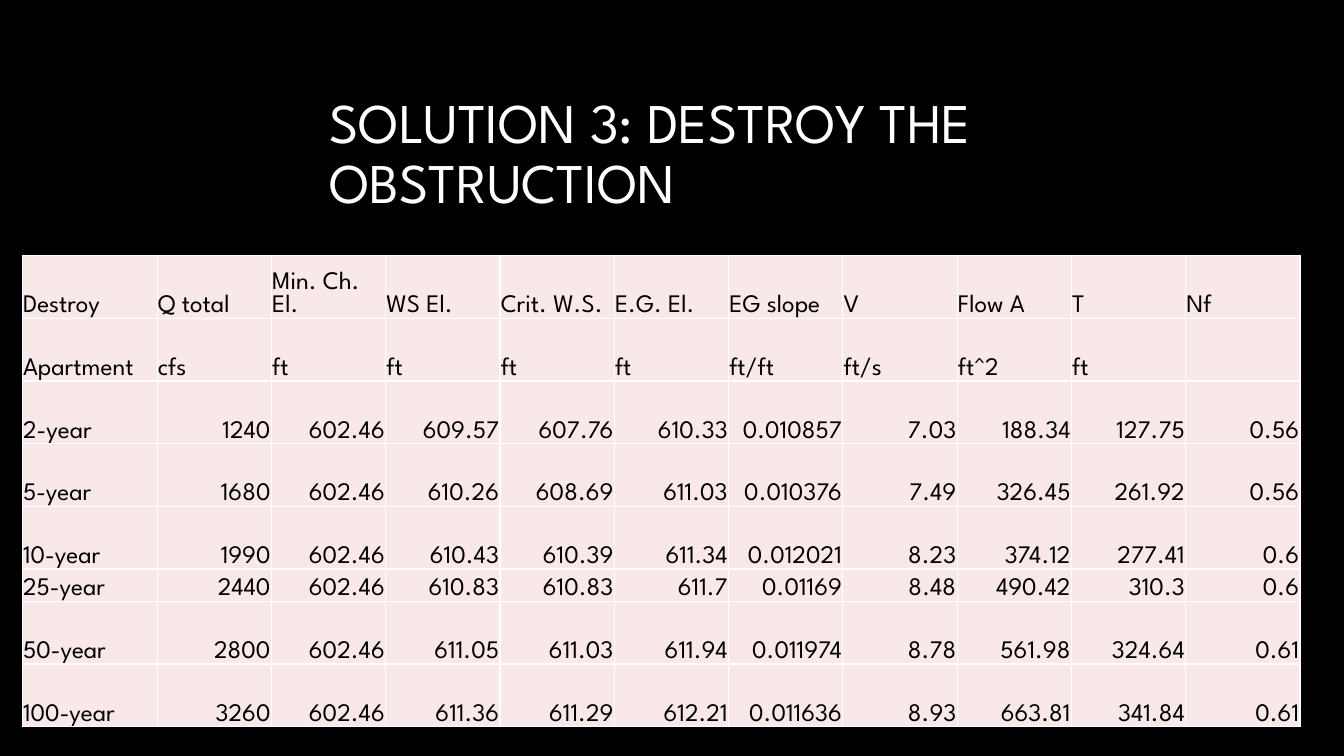
from dataclasses import dataclass

import lxml.etree
import pptx
import pptx.dml.color
import pptx.enum.text
import pptx.oxml.ns
import pptx.table
import pptx.text.text
import pptx.util
from pptx.util import Cm

FONT = "League Spartan"
BLACK, WHITE, PINK = "000000", "FFFFFF", "F9E8E8"
LEFT = pptx.enum.text.PP_ALIGN.LEFT
RIGHT = pptx.enum.text.PP_ALIGN.RIGHT
LABEL_WIDTH, VALUE_WIDTH = Cm(3.4), Cm(2.88)
TALL, SHORT = Cm(1.58), Cm(0.81)


@dataclass
class Row:
    label: str
    values: list[str]
    align: pptx.enum.text.PP_ALIGN = RIGHT
    height: int = TALL


ROWS = [
    Row("Destroy", ["Q total", "Min. Ch. El.", "WS El.", "Crit. W.S.", "E.G. El.",
                    "EG slope", "V", "Flow A", "T", "Nf"], LEFT),
    Row("Apartment", ["cfs", "ft", "ft", "ft", "ft", "ft/ft", "ft/s", "ft^2", "ft", ""], LEFT),
    Row("2-year", ["1240", "602.46", "609.57", "607.76", "610.33",
                   "0.010857", "7.03", "188.34", "127.75", "0.56"]),
    Row("5-year", ["1680", "602.46", "610.26", "608.69", "611.03",
                   "0.010376", "7.49", "326.45", "261.92", "0.56"]),
    Row("10-year", ["1990", "602.46", "610.43", "610.39", "611.34",
                    "0.012021", "8.23", "374.12", "277.41", "0.6"]),
    Row("25-year", ["2440", "602.46", "610.83", "610.83", "611.7",
                    "0.01169", "8.48", "490.42", "310.3", "0.6"], height=SHORT),
    Row("50-year", ["2800", "602.46", "611.05", "611.03", "611.94",
                    "0.011974", "8.78", "561.98", "324.64", "0.61"]),
    Row("100-year", ["3260", "602.46", "611.36", "611.29", "612.21",
                     "0.011636", "8.93", "663.81", "341.84", "0.61"]),
]


def rgb(color: str) -> pptx.dml.color.RGBColor:
    return pptx.dml.color.RGBColor.from_string(color)


def format_paragraph(p: pptx.text.text._Paragraph, size: float, color: str,
                     align: pptx.enum.text.PP_ALIGN) -> None:
    p.alignment = align
    p.font.name = FONT
    p.font.size = pptx.util.Pt(size)
    p.font.color.rgb = rgb(color)


def add_borders(cell: pptx.table._Cell, color: str, width: float) -> None:
    """Draw all four sides; call before the fill is set, as the schema order requires."""
    props = cell._tc.get_or_add_tcPr()
    for side in ("a:lnL", "a:lnR", "a:lnT", "a:lnB"):
        line = lxml.etree.SubElement(props, pptx.oxml.ns.qn(side), w=str(pptx.util.Pt(width)))
        fill = lxml.etree.SubElement(line, pptx.oxml.ns.qn("a:solidFill"))
        lxml.etree.SubElement(fill, pptx.oxml.ns.qn("a:srgbClr"), val=color)


def fill_cell(cell: pptx.table._Cell, text: str, align: pptx.enum.text.PP_ALIGN) -> None:
    cell.text = text
    format_paragraph(cell.text_frame.paragraphs[0], 18, BLACK, align)
    cell.vertical_anchor = pptx.enum.text.MSO_ANCHOR.BOTTOM
    cell.margin_left = cell.margin_right = cell.margin_top = Cm(0.02)
    cell.margin_bottom = 0
    add_borders(cell, WHITE, 1)
    cell.fill.solid()
    cell.fill.fore_color.rgb = rgb(PINK)


def main() -> None:
    prs = pptx.Presentation()
    prs.slide_width, prs.slide_height = Cm(33.87), Cm(19.05)
    s = prs.slides.add_slide(prs.slide_layouts.get_by_name("Title Only"))
    s.background.fill.solid()
    s.background.fill.fore_color.rgb = rgb(BLACK)

    title = s.shapes.title
    title.left, title.top, title.width, title.height = Cm(8.05), Cm(2.11), Cm(23.93), Cm(3.61)
    tf = title.text_frame
    tf.text = "SOLUTION 3: DESTROY THE OBSTRUCTION"
    tf.word_wrap = True
    tf.auto_size = pptx.enum.text.MSO_AUTO_SIZE.NONE
    tf.vertical_anchor = pptx.enum.text.MSO_ANCHOR.MIDDLE
    p = tf.paragraphs[0]
    p.line_spacing = 0.9
    format_paragraph(p, 40, WHITE, LEFT)

    widths = [LABEL_WIDTH] + [VALUE_WIDTH] * len(ROWS[0].values)
    table = s.shapes.add_table(len(ROWS), len(widths), Cm(0.56), Cm(6.44),
                               sum(widths), sum(row.height for row in ROWS)).table
    table.first_row = table.horz_banding = False
    for column, width in zip(table.columns, widths):
        column.width = width
    for i, row in enumerate(ROWS):
        table.rows[i].height = row.height
        fill_cell(table.cell(i, 0), row.label, LEFT)
        for j, value in enumerate(row.values, start=1):
            fill_cell(table.cell(i, j), value, row.align)

    prs.save("out.pptx")


if __name__ == "__main__":
    main()
